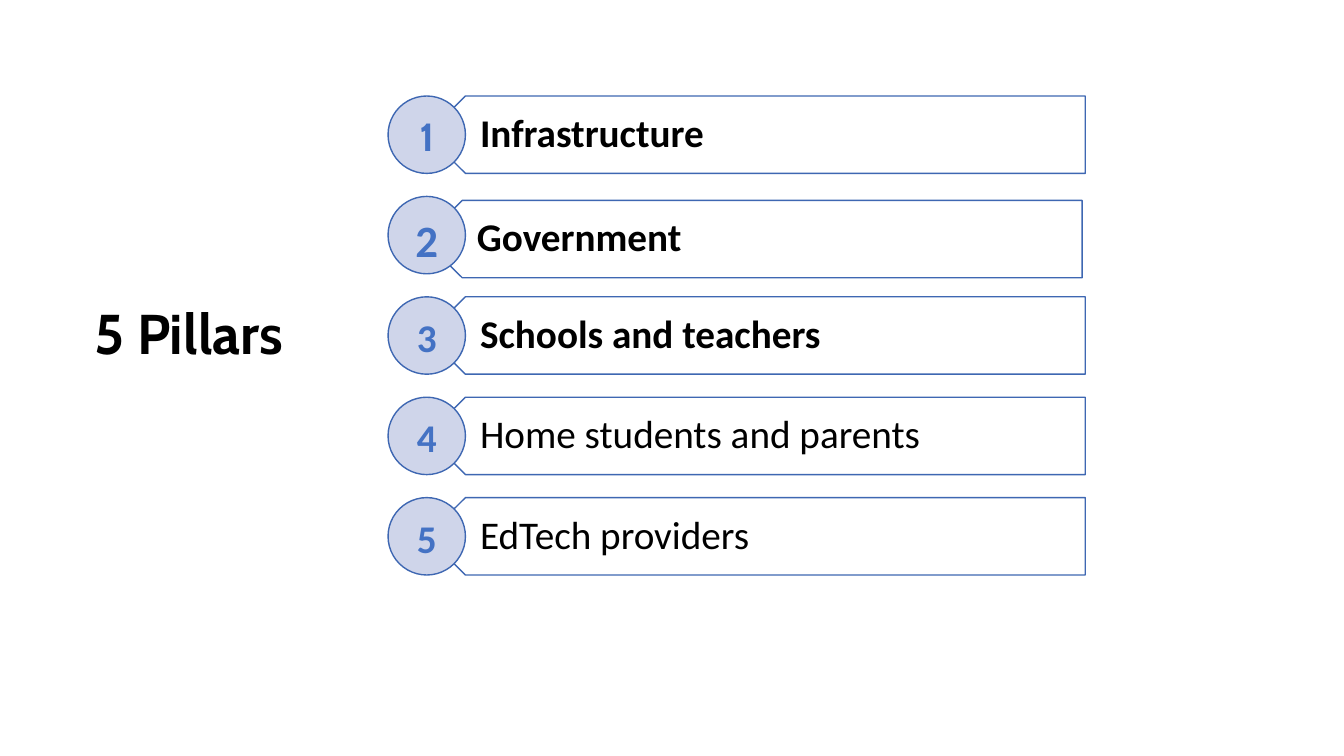
from dataclasses import dataclass

from pptx import Presentation
from pptx.dml.color import RGBColor
from pptx.enum.shapes import MSO_SHAPE
from pptx.enum.text import MSO_ANCHOR, PP_ALIGN
from pptx.util import Cm, Pt

OVAL = MSO_SHAPE.OVAL
MIDDLE, TOP = MSO_ANCHOR.MIDDLE, MSO_ANCHOR.TOP
LEFT, CENTER = PP_ALIGN.LEFT, PP_ALIGN.CENTER


@dataclass(frozen=True)
class Theme:
    black: RGBColor = RGBColor(0x00, 0x00, 0x00)
    white: RGBColor = RGBColor(0xFF, 0xFF, 0xFF)
    outline: RGBColor = RGBColor(0x3E, 0x67, 0xB2)
    badge: RGBColor = RGBColor(0xCF, 0xD5, 0xEA)
    number: RGBColor = RGBColor(0x44, 0x72, 0xC4)
    heading: str = "Cabin"
    body: str = "Calibri"
    title_size: int = 40
    large_size: int = 32
    body_size: int = 28


THEME = Theme()

# Row geometry in centimetres
TOP_ROW, PITCH = 2.42, 2.53
HEIGHT = 1.95
BADGE_LEFT = 9.78
BAR_LEFT, BAR_WIDTH, BAR_POINT = 10.75, 16.6, 0.98

# Label, bold label, number font, number size, bar offset (x, y)
PILLARS = [
    ("Infrastructure", True, THEME.heading, THEME.body_size, (0, 0)),
    ("Government", True, THEME.body, THEME.large_size, (-0.08, 0.1)),
    ("Schools and teachers", True, THEME.body, THEME.body_size, (0, 0)),
    ("Home students and parents", False, THEME.body, THEME.body_size, (0, 0)),
    ("EdTech providers", False, THEME.body, THEME.body_size, (0, 0)),
]


def write(sp, text, font, size, color, bold=True, align=LEFT, anchor=MIDDLE):
    tf = sp.text_frame
    tf.word_wrap = True
    tf.vertical_anchor = anchor
    p = tf.paragraphs[0]
    p.text = text
    p.alignment = align
    p.font.name = font
    p.font.size = Pt(size)
    p.font.bold = bold
    p.font.color.rgb = color
    return tf


def paint(sp, fill):
    sp.shadow.inherit = False
    sp.fill.solid()
    sp.fill.fore_color.rgb = fill
    sp.line.color.rgb = THEME.outline
    sp.line.width = Pt(1)


def add_title(s, text):
    sp = s.shapes.add_textbox(Cm(2.13), Cm(7.85), Cm(6.6), Cm(1.24))
    tf = write(sp, text, THEME.heading, THEME.title_size, THEME.black)
    tf.paragraphs[0].line_spacing = 0.9


def add_bar(s, left, top, text, bold):
    right, shoulder = left + BAR_WIDTH, left + BAR_POINT
    bottom, middle = top + HEIGHT, top + HEIGHT / 2
    outline = [(shoulder, bottom), (left, middle), (shoulder, top), (right, top)]
    builder = s.shapes.build_freeform(Cm(right), Cm(bottom))
    builder.add_line_segments([(Cm(x), Cm(y)) for x, y in outline], close=True)
    sp = builder.convert_to_shape()
    paint(sp, THEME.white)
    tf = write(sp, text, THEME.body, THEME.body_size, THEME.black, bold)
    tf.margin_left, tf.margin_right = Cm(1.35), Cm(0.56)
    tf.margin_top = tf.margin_bottom = Cm(0.3)
    tf.paragraphs[0].line_spacing = 0.9


def add_badge(s, top, number, font, size):
    sp = s.shapes.add_shape(OVAL, Cm(BADGE_LEFT), Cm(top), Cm(HEIGHT), Cm(HEIGHT))
    paint(sp, THEME.badge)
    write(sp, str(number), font, size, THEME.number, align=CENTER, anchor=TOP)


def main():
    prs = Presentation()
    prs.slide_width, prs.slide_height = Cm(33.87), Cm(19.05)
    s = prs.slides.add_slide(prs.slide_layouts[6])

    # Heading
    add_title(s, "5 Pillars")

    # Numbered pillars, each badge over the point of its bar
    for i, (label, bold, font, size, (dx, dy)) in enumerate(PILLARS):
        top = TOP_ROW + i * PITCH
        add_bar(s, BAR_LEFT + dx, top + dy, label, bold)
        add_badge(s, top, i + 1, font, size)

    prs.save("out.pptx")


if __name__ == "__main__":
    main()
